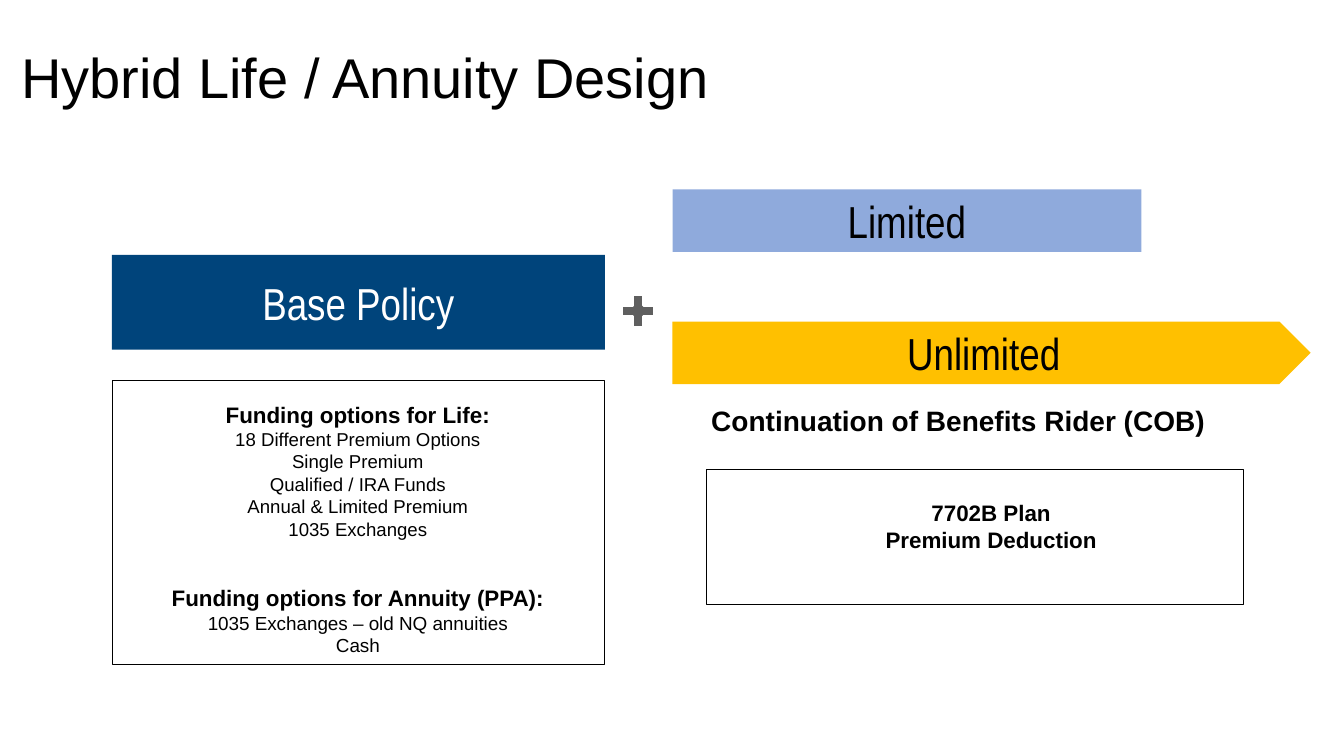
from lxml.etree import SubElement
from pptx import Presentation
from pptx.dml.color import RGBColor
from pptx.enum.shapes import MSO_SHAPE
from pptx.enum.text import MSO_ANCHOR, MSO_AUTO_SIZE, PP_ALIGN
from pptx.oxml.ns import qn
from pptx.util import Emu, Pt


def color(hex_string):
    return RGBColor.from_string(hex_string)


class SlideBuilder:
    SCALE = 9144
    FONT = "Arial"
    BAR_FONT = "Arial Narrow"
    BLACK = "000000"
    WHITE = "FFFFFF"

    def __init__(self, width, height):
        self.presentation = Presentation()
        self.presentation.slide_width = Emu(width * self.SCALE)
        self.presentation.slide_height = Emu(height * self.SCALE)
        layout = self.presentation.slide_layouts.get_by_name("Two Content")
        self.slide = self.presentation.slides.add_slide(layout)

    def box(self, *lengths):
        return [Emu(length * self.SCALE) for length in lengths]

    def place(self, shape, position):
        shape.left, shape.top, shape.width, shape.height = self.box(*position)
        frame = shape.text_frame
        frame.word_wrap = True
        frame.auto_size = MSO_AUTO_SIZE.NONE
        frame.vertical_anchor = MSO_ANCHOR.TOP
        return frame

    def set_text(self, paragraph, text, size, bold=False, font=FONT,
                 font_color=BLACK, align=PP_ALIGN.CENTER):
        paragraph.text = text
        paragraph.alignment = align
        paragraph.font.name = font
        paragraph.font.size = Pt(size)
        paragraph.font.bold = bold
        paragraph.font.color.rgb = color(font_color)

    def title(self, text, position):
        frame = self.place(self.slide.shapes.title, position)
        self.set_text(frame.paragraphs[0], text, 40, align=PP_ALIGN.LEFT)

    def body(self, index, position, lines):
        frame = self.place(self.slide.placeholders[index], position)
        for number, (text, size, bold, gap) in enumerate(lines):
            paragraph = frame.add_paragraph() if number else frame.paragraphs[0]
            self.set_text(paragraph, text, size, bold)
            paragraph.space_before = Pt(gap)
            properties = paragraph._p.get_or_add_pPr()
            properties.set("marL", "0")
            properties.set("indent", "0")
            bullet = SubElement(properties, qn("a:buNone"))
            properties.find(qn("a:defRPr")).addprevious(bullet)

    def label(self, text, position, size):
        frame = self.place(self.slide.shapes.add_textbox(*self.box(*position)), position)
        self.set_text(frame.paragraphs[0], text, size, bold=True)

    def shape(self, kind, position, fill=None, line=None, line_width=0):
        shape = self.slide.shapes.add_shape(kind, *self.box(*position))
        shape.shadow.inherit = False
        if fill:
            shape.fill.solid()
            shape.fill.fore_color.rgb = color(fill)
        else:
            shape.fill.background()
        if line:
            shape.line.color.rgb = color(line)
            shape.line.width = Pt(line_width)
        else:
            shape.line.fill.background()
        return shape

    def bar(self, kind, position, fill, text, font_color=BLACK):
        frame = self.shape(kind, position, fill).text_frame
        frame.vertical_anchor = MSO_ANCHOR.MIDDLE
        self.set_text(frame.paragraphs[0], text, 32, font=self.BAR_FONT, font_color=font_color)


def main():
    builder = SlideBuilder(1333, 750)
    builder.title("Hybrid Life / Annuity Design", (11, 37, 1011, 77))

    builder.shape(MSO_SHAPE.RECTANGLE, (112, 377, 488, 282), line=builder.BLACK, line_width=0.75)
    life_options = ["18 Different Premium Options", "Single Premium", "Qualified / IRA Funds",
                    "Annual & Limited Premium", "1035 Exchanges"]
    annuity_options = ["1035 Exchanges – old NQ annuities", "Cash"]
    builder.body(1, (98, 393, 514, 357), [
        ("Funding options for Life:", 16, True, 0),
        *[(option, 13.3, False, 0) for option in life_options],
        ("Funding options for Annuity (PPA):", 16, True, 32),
        *[(option, 13.5, False, 0) for option in annuity_options],
    ])

    builder.bar(MSO_SHAPE.PENTAGON, (667, 319, 633, 62), "FFC000", "Unlimited")
    builder.bar(MSO_SHAPE.RECTANGLE, (111, 253, 489, 94), "00447B", "Base Policy", builder.WHITE)
    builder.bar(MSO_SHAPE.RECTANGLE, (667, 188, 465, 62), "8FAADC", "Limited")
    builder.shape(MSO_SHAPE.MATH_PLUS, (611, 286, 44, 45), "5F5F5F", builder.WHITE, 2)

    builder.label("Continuation of Benefits Rider (COB)", (667, 395, 567, 44), 20)
    builder.shape(MSO_SHAPE.RECTANGLE, (700, 466, 533, 133), line=builder.BLACK, line_width=0.25)
    builder.body(2, (711, 490, 544, 109), [
        ("7702B Plan", 16, True, 0),
        ("Premium Deduction", 16, True, 0),
    ])

    builder.presentation.save("out.pptx")


if __name__ == "__main__":
    main()
